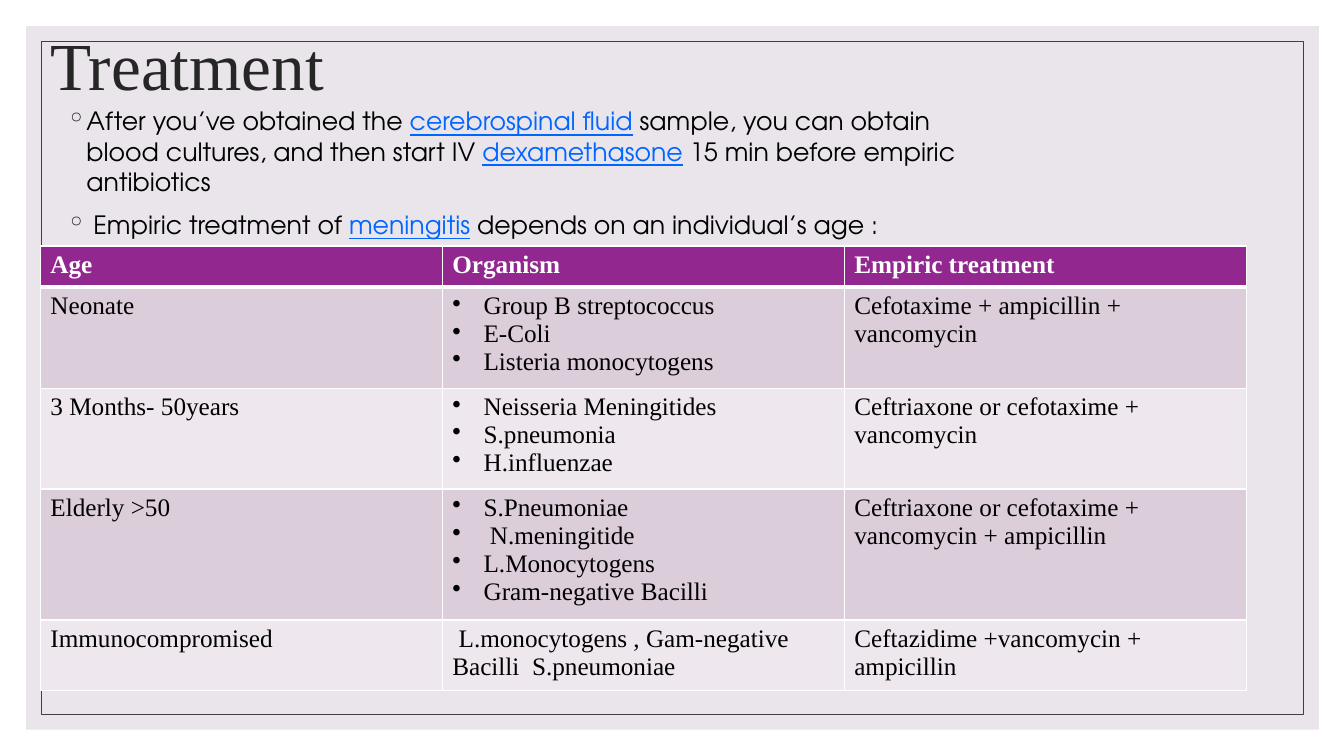
from pptx import Presentation, util as u
from pptx.dml.color import RGBColor
from pptx.enum import shapes, text
from pptx.oxml import parse_xml
from pptx.oxml.ns import nsdecls

SERIF = "Times New Roman"
SANS = "TeX Gyre Adventor"
INK = "000000"
DARK = "262626"
LINK = "0066FF"
WHITE = "FFFFFF"

POINTS = [
    [("After you’ve obtained the ", False), ("cerebrospinal fluid", True),
     (" sample, you can obtain blood cultures, and then start IV ", False),
     ("dexamethasone", True), (" 15 min before empiric antibiotics", False)],
    [(" Empiric treatment of ", False), ("meningitis", True),
     (" depends on an individual’s age :", False)],
]
HEADS = ("Age", "Organism", "Empiric treatment")
ROWS = [
    ("Neonate",
     ["Group B streptococcus", "E-Coli", "Listeria monocytogens"],
     "Cefotaxime + ampicillin + vancomycin"),
    ("3 Months- 50years",
     ["Neisseria Meningitides", "S.pneumonia", "H.influenzae"],
     "Ceftriaxone or cefotaxime + vancomycin"),
    ("Elderly >50",
     ["S.Pneumoniae", " N.meningitide", "L.Monocytogens", "Gram-negative Bacilli"],
     "Ceftriaxone or cefotaxime + vancomycin + ampicillin"),
    ("Immunocompromised",
     " L.monocytogens , Gam-negative Bacilli  S.pneumoniae",
     "Ceftazidime +vancomycin + ampicillin"),
]
HEIGHTS = (0.41, 0.93, 0.93, 1.21, 0.65)


def color(code):
    return RGBColor.from_string(code)


def style(font, face, size, code, bold=False):
    font.name = face
    font.size = u.Pt(size)
    font.bold = bold
    font.color.rgb = color(code)


def bullet(para, mark, indent, code):
    props = para._p.get_or_add_pPr()
    props.set("marL", str(u.Inches(indent)))
    props.set("indent", str(-u.Inches(indent)))
    props.append(parse_xml(
        f'<a:buClr {nsdecls("a")}><a:srgbClr val="{code}"/></a:buClr>'))
    props.append(parse_xml(f'<a:buChar {nsdecls("a")} char="{mark}"/>'))


def border(cell, side, width):
    cell._tc.get_or_add_tcPr().append(parse_xml(
        f'<a:ln{side} {nsdecls("a")} w="{u.Pt(width)}"><a:solidFill>'
        f'<a:srgbClr val="{WHITE}"/></a:solidFill></a:ln{side}>'))


def panel(slide, box, fill=None, line=None):
    rect = slide.shapes.add_shape(
        shapes.MSO_SHAPE.RECTANGLE, *map(u.Inches, box))
    rect.shadow.inherit = False
    if fill:
        rect.fill.solid()
        rect.fill.fore_color.rgb = color(fill)
    else:
        rect.fill.background()
    if line:
        rect.line.color.rgb = color(line)
        rect.line.width = u.Pt(0.5)
    else:
        rect.line.fill.background()


def frame(slide, box):
    area = slide.shapes.add_textbox(*map(u.Inches, box)).text_frame
    area.word_wrap = True
    return area


def title(slide, box):
    area = frame(slide, box)
    area.vertical_anchor = text.MSO_ANCHOR.MIDDLE
    para = area.paragraphs[0]
    para.text = "Treatment"
    para.line_spacing = 0.9
    style(para.font, SERIF, 48, DARK)


def body(slide, box):
    area = frame(slide, box)
    for i, parts in enumerate(POINTS):
        para = area.add_paragraph() if i else area.paragraphs[0]
        bullet(para, "◦", 0.2, DARK)
        if i:
            para.space_before = u.Pt(9)
        style(para.font, SANS, 18, INK)
        for words, link in parts:
            run = para.add_run()
            run.text = words
            if link:
                run.font.color.rgb = color(LINK)
                run.font.underline = True


def fill_cell(cell, words, head, fill):
    for side in "LRTB":
        border(cell, side, 3 if head and side == "B" else 1)
    cell.fill.solid()
    cell.fill.fore_color.rgb = color(fill)
    listed = isinstance(words, list)
    area = cell.text_frame
    for i, line in enumerate(words if listed else [words]):
        para = area.add_paragraph() if i else area.paragraphs[0]
        para.text = line
        if listed:
            bullet(para, "•", 0.31, INK)
        style(para.font, SERIF, 18, WHITE if head else INK, head)


def grid(slide, left, top, width):
    table = slide.shapes.add_table(
        len(HEIGHTS), len(HEADS), u.Inches(left), u.Inches(top),
        u.Inches(width), u.Inches(sum(HEIGHTS))).table
    for col in table.columns:
        col.width = u.Inches(width / len(HEADS))
    for r, (tall, row) in enumerate(zip(HEIGHTS, [HEADS] + ROWS)):
        table.rows[r].height = u.Inches(tall)
        fill = ("EEE8EE", "DCCDDB")[r % 2] if r else "92278F"
        for c, words in enumerate(row):
            fill_cell(table.cell(r, c), words, r == 0, fill)


def main():
    deck = Presentation()
    deck.slide_width = u.Inches(13.33)
    deck.slide_height = u.Inches(7.5)
    slide = deck.slides.add_slide(deck.slide_layouts[6])
    panel(slide, (0.26, 0.26, 12.82, 6.98), fill="EAE5EB")
    panel(slide, (0.41, 0.41, 12.52, 6.68), line="404040")
    title(slide, (0.4, 0.14, 8.51, 1.09))
    body(slide, (0.56, 1, 9.4, 4.24))
    grid(slide, 0.4, 2.44, 11.96)
    deck.save("out.pptx")


if __name__ == "__main__":
    main()
